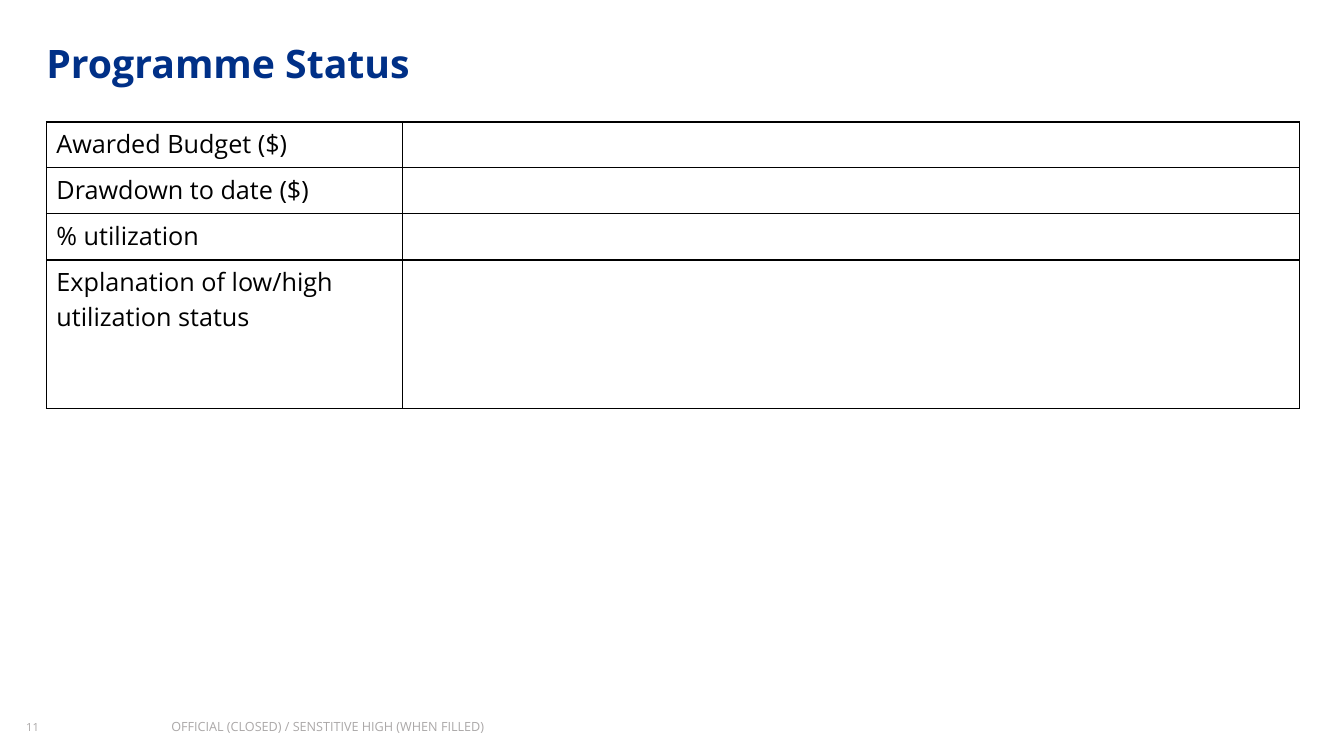
from pptx import Presentation
from pptx.dml.color import RGBColor
from pptx.enum import text
from pptx.oxml import parse_xml
from pptx.oxml.ns import nsdecls
from pptx.util import Inches, Pt

FONT = "Open Sans"
BLACK, NAVY, GREY = "000000", "003087", "ABA8A8"

ROWS = [
    ("Awarded Budget ($)", 0.45),
    ("Drawdown to date ($)", 0.46),
    ("% utilization", 0.46),
    ("Explanation of low/high utilization status", 1.47),
]
COLUMN_WIDTHS = [3.53, 8.9]


def color(value):
    return RGBColor.from_string(value)


def write(frame, words, size=18, fill=BLACK, bold=False, spacing=None):
    paragraph = frame.paragraphs[0]
    paragraph.line_spacing = spacing
    paragraph.font.size = Pt(size)
    run = paragraph.add_run()
    run.text = words
    run.font.name = FONT
    run.font.size = Pt(size)
    run.font.bold = bold
    run.font.color.rgb = color(fill)


def add_text(slide, box, words, anchor=text.MSO_ANCHOR.TOP, **style):
    shape = slide.shapes.add_textbox(*map(Inches, box))
    frame = shape.text_frame
    frame.word_wrap = True
    frame.vertical_anchor = anchor
    frame.margin_left = frame.margin_right = 0
    frame.margin_top = frame.margin_bottom = 0
    write(frame, words, **style)


def set_borders(cell, width=1):
    properties = cell._tc.get_or_add_tcPr()
    for position, side in enumerate(("lnL", "lnR", "lnT", "lnB")):
        line = parse_xml(
            f'<a:{side} {nsdecls("a")} w="{Pt(width)}"><a:solidFill>'
            f'<a:srgbClr val="{BLACK}"/></a:solidFill></a:{side}>'
        )
        properties.insert(position, line)


def add_status_table(slide, left, top):
    height = sum(row_height for _, row_height in ROWS)
    box = (left, top, sum(COLUMN_WIDTHS), height)
    frame = slide.shapes.add_table(len(ROWS), len(COLUMN_WIDTHS), *map(Inches, box))
    table = frame.table
    table.first_row = table.horz_banding = False
    for column, width in zip(table.columns, COLUMN_WIDTHS):
        column.width = Inches(width)
    for row, (label, row_height) in zip(table.rows, ROWS):
        row.height = Inches(row_height)
        write(row.cells[0].text_frame, label)
        for cell in row.cells:
            cell.fill.background()
            set_borders(cell)


def add_footer(slide, left, top):
    add_text(slide, (left, top, 0.79, 0.19), "11", size=8, fill=GREY, spacing=1.1)
    add_text(slide, (left + 1.44, top, 5.33, 0.19),
             "OFFICIAL (CLOSED) / SENSTITIVE HIGH (WHEN FILLED)", size=9, fill=GREY)


def main():
    presentation = Presentation()
    presentation.slide_width = Inches(13.33)
    presentation.slide_height = Inches(7.5)
    slide = presentation.slides.add_slide(presentation.slide_layouts[6])

    # Title
    add_text(slide, (0.46, 0.34, 11.02, 0.52), "Programme Status",
             anchor=text.MSO_ANCHOR.MIDDLE, size=28, fill=NAVY, bold=True, spacing=1.1)
    # Budget status
    add_status_table(slide, 0.46, 1.21)
    # Page number and classification
    add_footer(slide, 0.26, 7.13)

    presentation.save("out.pptx")


if __name__ == "__main__":
    main()
